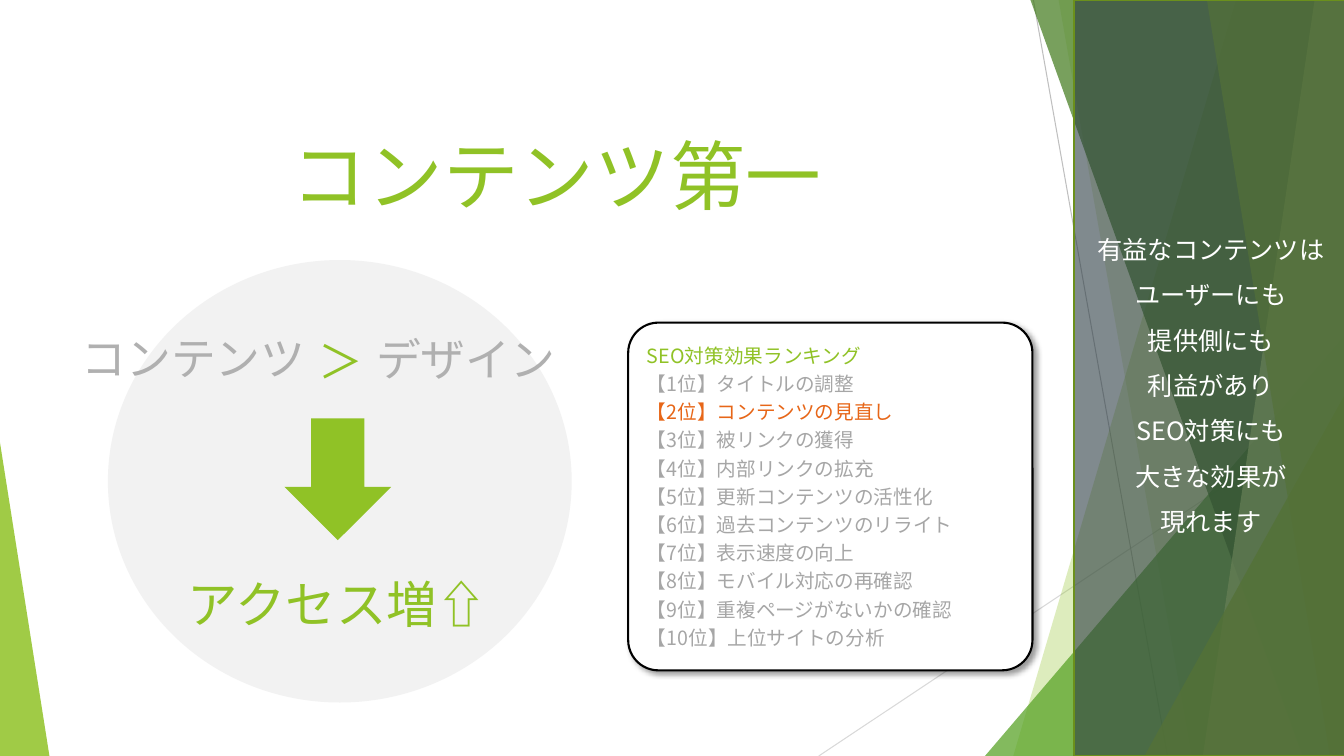
from dataclasses import dataclass

from lxml import etree
from pptx import Presentation
from pptx import util as u
from pptx.dml.color import RGBColor
from pptx.enum import shapes, text
from pptx.oxml import ns


@dataclass(frozen=True)
class Theme:
    font: str = "Noto Sans CJK JP"
    green: str = "90C226"
    leaf: str = "54A021"
    forest: str = "3F7819"
    lime: str = "C0E474"
    slate: str = "2C3C43"
    olive: str = "6B901C"
    orange: str = "E76618"
    white: str = "FFFFFF"
    black: str = "000000"
    disc: str = "F2F2F2"
    label: str = "B0B0B0"
    muted: str = "A6A6A6"
    pale_line: str = "D9D9D9"
    dark_line: str = "BFBFBF"
    title: int = 54
    result: int = 36
    compare: int = 32
    message: int = 18
    ranking: int = 14


THEME = Theme()
WIDTH, HEIGHT = u.Inches(13.33), u.Inches(7.5)
COLUMNS = ROWS = 100

RAYS = [
    (THEME.green, 30, [(91.97, 0), (75.39, 100), (100, 100), (100, 0)]),
    (THEME.green, 20, [(78.77, 0), (88.67, 100), (100, 100), (100, 0)]),
    (THEME.leaf, 72, [(73.29, 100), (100, 44.4), (100, 100)]),
    (THEME.forest, 70, [(76.67, 0), (96.92, 100), (100, 100), (100, 0)]),
    (THEME.lime, 70, [(97.82, 0), (89.5, 100), (100, 100), (100, 0)]),
    (THEME.green, 65, [(89.8, 0), (98.95, 100), (100, 100), (100, 0)]),
    (THEME.green, 80, [(85.15, 100), (100, 52.4), (100, 100)]),
    (THEME.green, 85, [(0, 58.53), (3.68, 100), (0, 100)]),
]
MESSAGE = ["有益なコンテンツは", "ユーザーにも", "提供側にも", "利益があり",
           "SEO対策にも", "大きな効果が", "現れます"]
RANKING_TITLE = "SEO対策効果ランキング"
RANKING = ["タイトルの調整", "コンテンツの見直し", "被リンクの獲得", "内部リンクの拡充",
           "更新コンテンツの活性化", "過去コンテンツのリライト", "表示速度の向上",
           "モバイル対応の再確認", "重複ページがないかの確認", "上位サイトの分析"]
HIGHLIGHTED_RANK = 2


def place(column, row):
    return round(WIDTH * column / COLUMNS), round(HEIGHT * row / ROWS)


def rgb(color):
    return RGBColor.from_string(color)


def paint(shape, fill, opacity=100, line=None):
    shape.shadow.inherit = False
    shape.fill.solid()
    shape.fill.fore_color.rgb = rgb(fill)
    if opacity < 100:
        srgb = shape.fill._xPr.find(".//" + ns.qn("a:srgbClr"))
        etree.SubElement(srgb, ns.qn("a:alpha"), val=str(opacity * 1000))
    if line:
        shape.line.color.rgb = rgb(line)
        shape.line.width = u.Pt(1.5)
    else:
        shape.line.fill.background()


def add_ray(slide, color, opacity, corners):
    points = [place(*corner) for corner in corners]
    builder = slide.shapes.build_freeform(*points[0])
    builder.add_line_segments(points[1:], close=True)
    paint(builder.convert_to_shape(), color, opacity)


def add_hairline(slide, start, end, color):
    hairline = slide.shapes.add_connector(
        shapes.MSO_CONNECTOR.STRAIGHT, *place(*start), *place(*end))
    hairline.line.color.rgb = rgb(color)
    hairline.line.width = u.Pt(0.75)
    etree.SubElement(hairline._element.spPr, ns.qn("a:effectLst"))


def add_panel(slide, preset, box, fill, opacity=100, line=None):
    panel = slide.shapes.add_shape(preset, *place(*box[:2]), *place(*box[2:]))
    paint(panel, fill, opacity, line)
    return panel


def cast_shadow(shape):
    effects = shape._element.spPr.find(ns.qn("a:effectLst"))
    shadow = etree.SubElement(effects, ns.qn("a:outerShdw"), blurRad=str(u.Pt(4)),
                              dist=str(u.Pt(3)), dir=str(45 * 60000), algn="tl")
    tint = etree.SubElement(shadow, ns.qn("a:srgbClr"), val=THEME.black)
    etree.SubElement(tint, ns.qn("a:alpha"), val="40000")


def write(shape, lines, size, align=text.PP_ALIGN.CENTER):
    frame = shape.text_frame
    frame.word_wrap = True
    frame.vertical_anchor = text.MSO_ANCHOR.MIDDLE
    for index, (words, color, spacing) in enumerate(lines):
        paragraph = frame.paragraphs[0] if index == 0 else frame.add_paragraph()
        for name, value in {"alignment": align, "line_spacing": spacing}.items():
            setattr(paragraph, name, value)
        run = paragraph.add_run()
        run.text = words
        for name, value in {"size": u.Pt(size), "name": THEME.font}.items():
            setattr(run.font, name, value)
        run.font.color.rgb = rgb(color)
        etree.SubElement(run.font._element, ns.qn("a:ea"), typeface=THEME.font)


def add_label(slide, box, words, size, color):
    label = slide.shapes.add_textbox(*place(*box[:2]), *place(*box[2:]))
    write(label, [(words, color, None)], size)


def add_ranking(slide, box):
    card = add_panel(slide, shapes.MSO_SHAPE.ROUNDED_RECTANGLE, box,
                     THEME.white, line=THEME.black)
    card.adjustments[0] = 0.087
    cast_shadow(card)
    lines = [(RANKING_TITLE, THEME.green, None)]
    for rank, measure in enumerate(RANKING, 1):
        color = THEME.orange if rank == HIGHLIGHTED_RANK else THEME.muted
        lines.append((f"【{rank}位】{measure}", color, 1.2))
    write(card, lines, THEME.ranking, text.PP_ALIGN.LEFT)


def main():
    deck = Presentation()
    deck.slide_width, deck.slide_height = WIDTH, HEIGHT
    slide = deck.slides.add_slide(deck.slide_layouts[6])

    add_hairline(slide, (60.92, 100), (100, 53.73), THEME.pale_line)
    add_hairline(slide, (76.89, 0), (86.87, 100), THEME.dark_line)
    for color, opacity, corners in RAYS:
        add_ray(slide, color, opacity, corners)

    add_panel(slide, shapes.MSO_SHAPE.OVAL, (8.03, 34.4, 34.51, 58.53), THEME.disc)
    add_label(slide, (3.08, 12, 76.67, 22), "コンテンツ第一", THEME.title, THEME.green)
    add_label(slide, (22.06, 40.13, 25.21, 14.53), "デザイン", THEME.compare, THEME.label)
    sidebar = add_panel(slide, shapes.MSO_SHAPE.RECTANGLE, (79.9, 0, 20.4, 100),
                        THEME.slate, 60, THEME.olive)
    write(sidebar, [(line, THEME.white, 1.5) for line in MESSAGE], THEME.message)
    add_label(slide, (1.8, 40, 25.21, 14.53), "コンテンツ", THEME.compare, THEME.label)
    add_label(slide, (22.66, 41.2, 5.48, 13.07), "＞", THEME.compare, THEME.green)
    add_ranking(slide, (46.74, 42.67, 30.08, 46))
    add_label(slide, (8.93, 68.8, 32.33, 22), "アクセス増⇧", THEME.result, THEME.green)
    add_panel(slide, shapes.MSO_SHAPE.DOWN_ARROW, (21.16, 55.33, 7.95, 16.13), THEME.green)

    deck.save("out.pptx")


if __name__ == "__main__":
    main()
